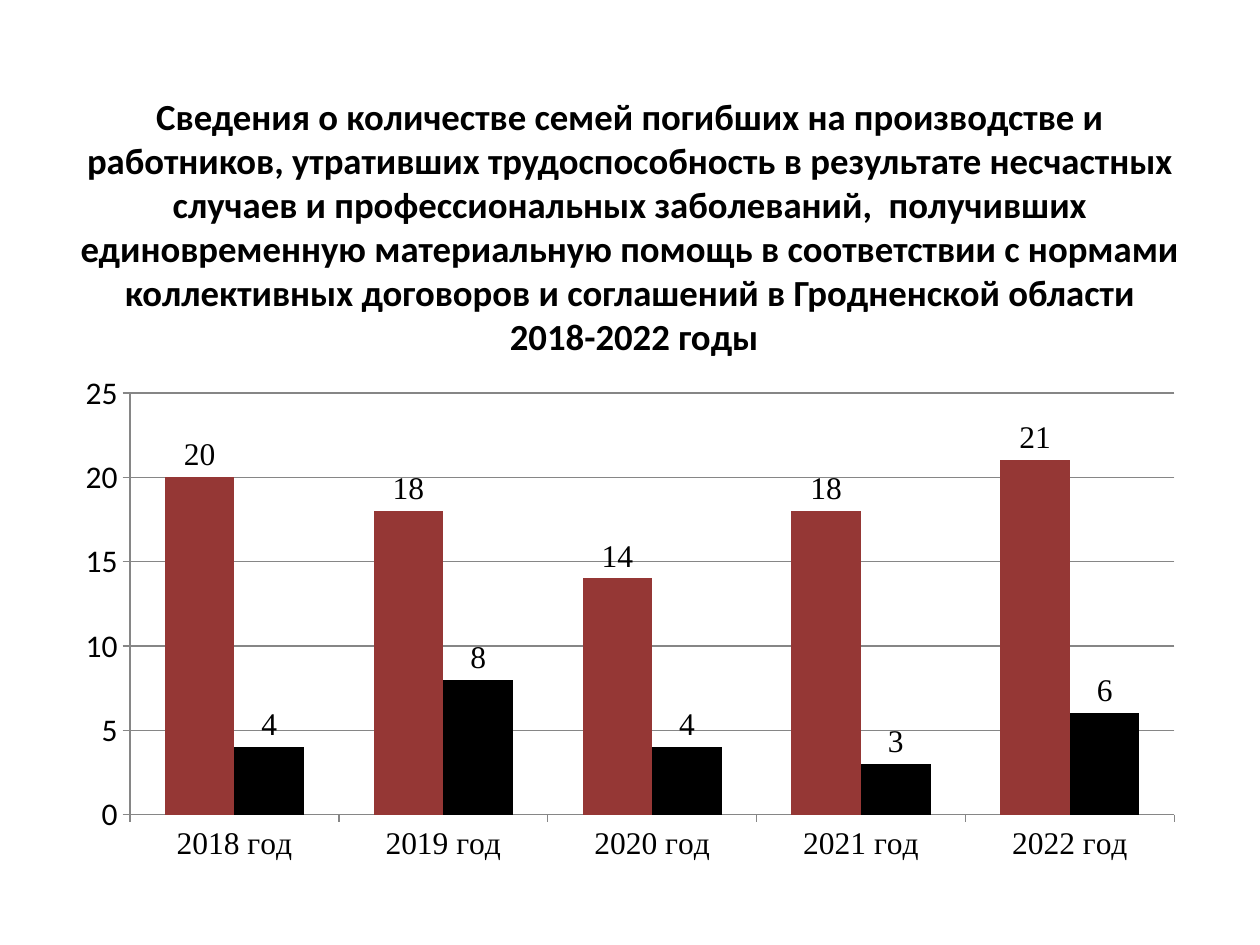
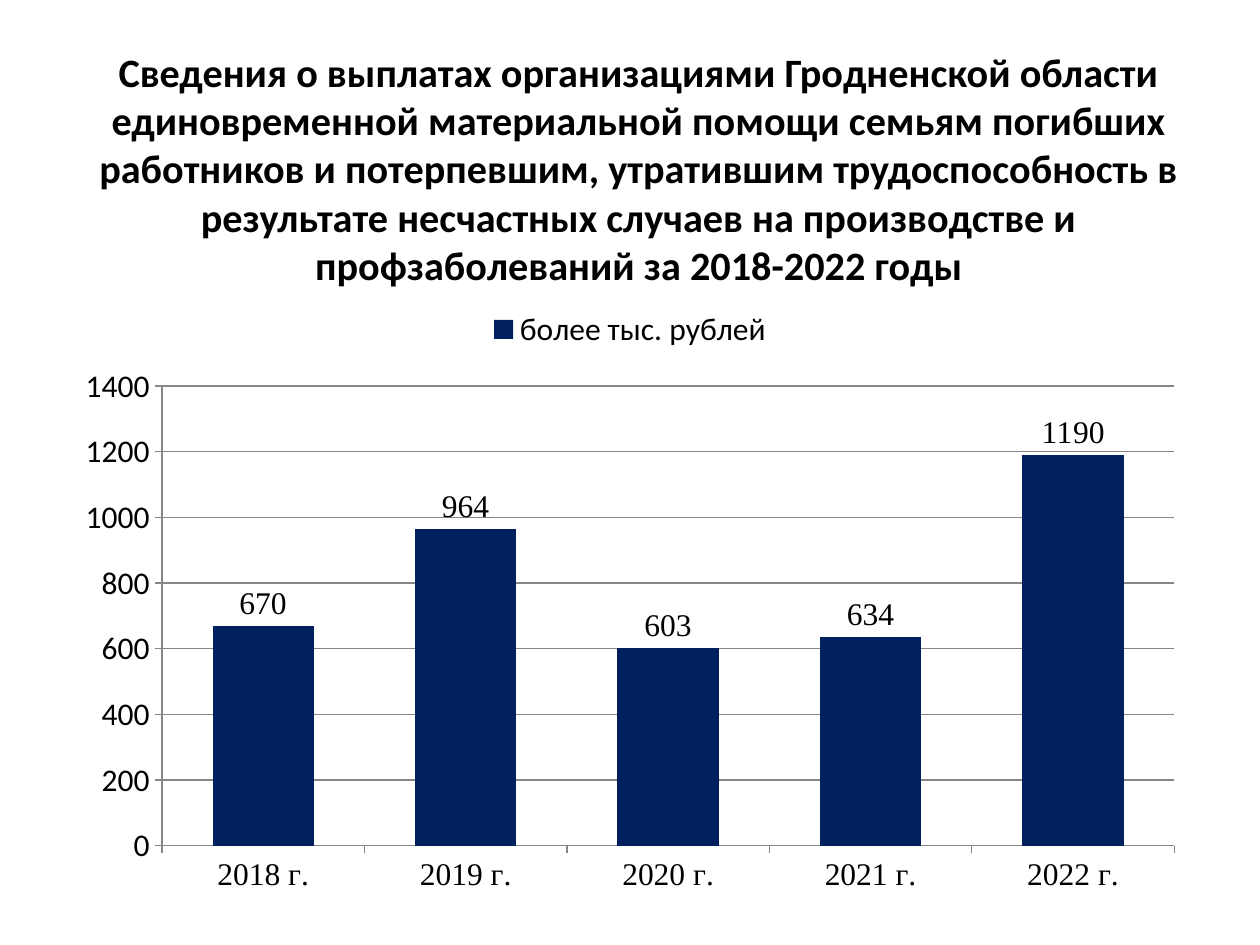
from pptx import Presentation as Deck
from pptx.chart.data import CategoryChartData as Data
from pptx.dml.color import RGBColor as Color
from pptx.enum.chart import XL_CHART_TYPE as Kind
from pptx.enum.chart import XL_LABEL_POSITION as Spot
from pptx.enum.chart import XL_LEGEND_POSITION as Side
from pptx.enum.chart import XL_TICK_MARK as Tick
from pptx.enum.text import MSO_ANCHOR as Anchor
from pptx.enum.text import MSO_AUTO_SIZE as Fit
from pptx.enum.text import PP_ALIGN as Align
from pptx.util import Inches, Pt

BLACK = Color(0x00, 0x00, 0x00)
WHITE = Color(0xFF, 0xFF, 0xFF)
GREY = Color(0x86, 0x86, 0x86)
RED = Color(0x95, 0x37, 0x35)
NAVY = Color(0x00, 0x20, 0x60)

WIDE, HIGH = Inches(10), Inches(7.5)
YEARS = range(2018, 2023)
SANS = {"name": "Calibri", "size": Pt(18), "bold": False}
SERIF = {**SANS, "name": "Times New Roman"}
HEAD = {"name": "Calibri", "bold": True}
FRAME = {"word_wrap": True, "auto_size": Fit.NONE, "vertical_anchor": Anchor.MIDDLE}
AXIS = {"major_tick_mark": Tick.OUTSIDE, "minor_tick_mark": Tick.NONE}
LABEL = {"show_value": True, "position": Spot.OUTSIDE_END}
PLOT = {"gap_width": 100, "overlap": 0, "vary_by_categories": False}

FIRST = {
    "title": "Сведения о количестве семей погибших на производстве и работников, "
             "утративших трудоспособность в результате несчастных случаев и "
             "профессиональных заболеваний,  получивших единовременную материальную "
             "помощь в соответствии с нормами коллективных договоров и соглашений "
             "в Гродненской области\v 2018-2022 годы",
    "size": 21,
    "head": (0.05, 0.093, 0.9, 0.292),
    "area": (0.05, 0.385, 0.9, 0.537),
    "unit": "год",
    "scale": (25, 5),
    "bars": [("Series 1", (20, 18, 14, 18, 21), RED),
             ("Series 2", (4, 8, 4, 3, 6), BLACK)],
    "legend": False,
}
SECOND = {
    "title": "Сведения о выплатах организациями Гродненской области единовременной "
             "материальной помощи семьям погибших работников и потерпевшим, "
             "утратившим трудоспособность в результате несчастных случаев на "
             "производстве и профзаболеваний за 2018-2022 годы",
    "size": 23,
    "head": (0.031, 0.052, 0.953, 0.251),
    "area": (0.05, 0.312, 0.9, 0.645),
    "unit": "г.",
    "scale": (1400, 200),
    "bars": [("более тыс. рублей", (670, 964, 603, 634, 1190), NAVY)],
    "legend": True,
}


def apply(item, form):
    for key, value in form.items():
        setattr(item, key, value)


def style(font, form):
    apply(font, form)
    font.color.rgb = BLACK


def place(box):
    return [int(share * full) for share, full in zip(box, (WIDE, HIGH) * 2)]


def add_title(slide, page):
    title = slide.shapes.title
    apply(title, dict(zip(("left", "top", "width", "height"), place(page["head"]))))
    frame = title.text_frame
    apply(frame, FRAME)
    frame.text = page["title"]
    line = frame.paragraphs[0]
    line.alignment = Align.CENTER
    for run in line.runs:
        style(run.font, {**HEAD, "size": Pt(page["size"])})


def set_axis(axis, form):
    apply(axis, AXIS)
    style(axis.tick_labels.font, form)
    axis.format.line.color.rgb = GREY


def set_scale(axis, top, step):
    apply(axis, {"minimum_scale": 0, "maximum_scale": top, "major_unit": step,
                 "has_major_gridlines": True})
    axis.major_gridlines.format.line.color.rgb = GREY


def paint(bar, color):
    bar.invert_if_negative = False
    bar.format.fill.solid()
    bar.format.fill.fore_color.rgb = color
    apply(bar.data_labels, LABEL)
    style(bar.data_labels.font, SERIF)


def add_graph(slide, page):
    data = Data()
    data.categories = [f"{year} {page['unit']}" for year in YEARS]
    for name, values, _ in page["bars"]:
        data.add_series(name, values)
    chart = slide.shapes.add_chart(Kind.COLUMN_CLUSTERED, *place(page["area"]), data).chart
    apply(chart, {"has_title": False, "has_legend": page["legend"]})
    style(chart.font, SANS)
    plot = chart.plots[0]
    apply(plot, PLOT)
    for bar, (_, _, color) in zip(plot.series, page["bars"]):
        paint(bar, color)
    set_axis(chart.category_axis, SERIF)
    set_axis(chart.value_axis, SANS)
    set_scale(chart.value_axis, *page["scale"])
    if page["legend"]:
        apply(chart.legend, {"position": Side.TOP, "include_in_layout": False})
        style(chart.legend.font, SANS)


def main():
    deck = Deck()
    apply(deck, {"slide_width": WIDE, "slide_height": HIGH})
    back = deck.slide_master.background.fill
    back.solid()
    back.fore_color.rgb = WHITE
    for page in (FIRST, SECOND):
        slide = deck.slides.add_slide(deck.slide_layouts.get_by_name("Title Only"))
        add_title(slide, page)
        add_graph(slide, page)
    deck.save("out.pptx")


if __name__ == "__main__":
    main()
